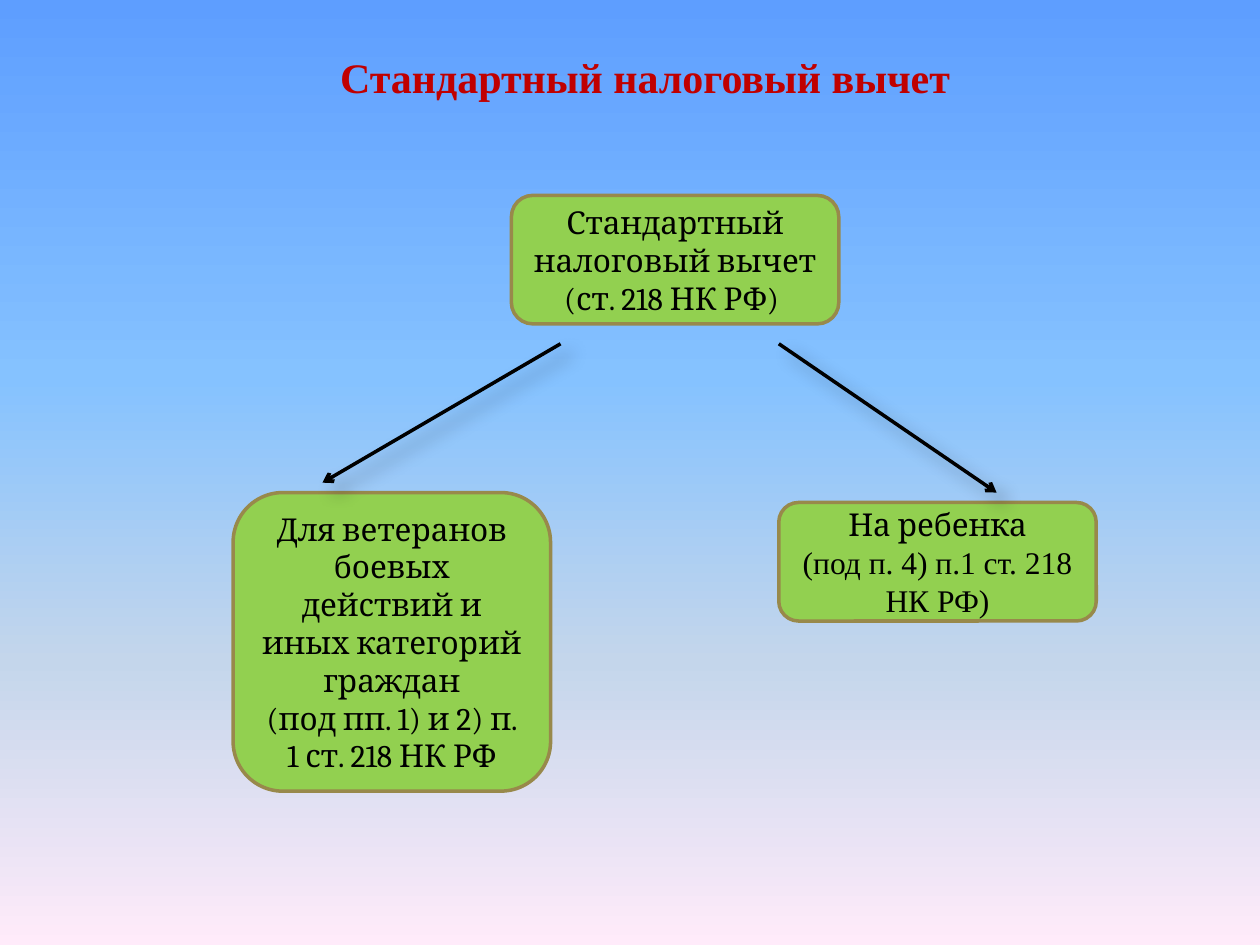
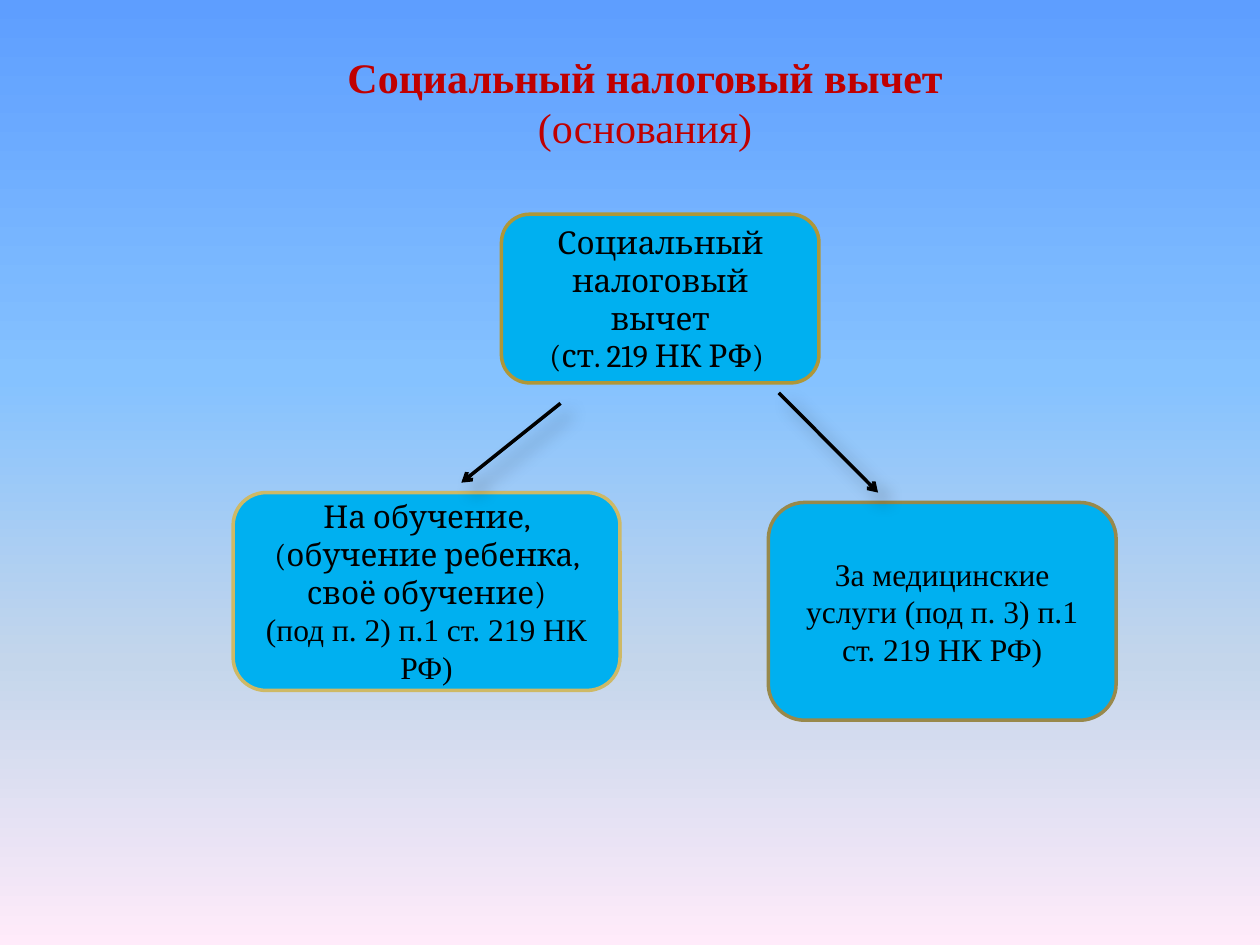
from pptx import Presentation
from pptx import util as u
from pptx.dml.color import RGBColor
from pptx.enum import shapes, text
from pptx.oxml import parse_xml
from pptx.oxml.ns import nsdecls, qn

BLACK = RGBColor(0x00, 0x00, 0x00)
TITLE_RED = RGBColor(0xC0, 0x00, 0x00)
GREEN = RGBColor(0x92, 0xD0, 0x50)
BLUE = RGBColor(0x00, 0xB0, 0xF0)
BROWN = RGBColor(0x98, 0x89, 0x4B)
OCHRE = RGBColor(0xAF, 0x97, 0x38)
SAND = RGBColor(0xCE, 0xB9, 0x66)
SKY_STOPS = [
    (0, RGBColor(0x5E, 0x9E, 0xFF)),
    (40, RGBColor(0x85, 0xC2, 0xFF)),
    (70, RGBColor(0xC4, 0xD6, 0xEB)),
    (100, RGBColor(0xFF, 0xEB, 0xFA)),
]
SERIF = "Times New Roman"
BOOK = "Cambria"
LEFT_COLUMN = 4.7
LEFT_TOP, RIGHT_TOP = 9.93, 10.13
LEFT_START, RIGHT_START = 11.3, 15.7
LEFT_TIP, RIGHT_TIP = 9.73, 9.93
BOX_WIDTH = 6.4


class DeductionDeck:
    def __init__(self):
        self.presentation = Presentation()
        self.presentation.slide_width = u.Cm(25.4)
        self.presentation.slide_height = u.Cm(19.05)
        self.slide = None

    def add_slide(self):
        self.slide = self.presentation.slides.add_slide(self.presentation.slide_layouts[6])
        stops = "".join(
            f'<a:gs pos="{position * 1000}"><a:srgbClr val="{color}"/></a:gs>'
            for position, color in SKY_STOPS
        )
        background = parse_xml(
            f'<p:bg {nsdecls("p", "a")}><p:bgPr><a:gradFill rotWithShape="1">'
            f'<a:gsLst>{stops}</a:gsLst><a:lin ang="5400000" scaled="0"/>'
            "</a:gradFill><a:effectLst/></p:bgPr></p:bg>"
        )
        self.slide.element.cSld.insert(0, background)

    def set_lines(self, frame, lines, size, color):
        frame.word_wrap = True
        for index, (words, font_name, bold) in enumerate(lines):
            paragraph = frame.paragraphs[0] if index == 0 else frame.add_paragraph()
            paragraph.text = words
            paragraph.alignment = text.PP_ALIGN.CENTER
            paragraph.font.name = font_name
            paragraph.font.size = u.Pt(size)
            paragraph.font.bold = bold
            paragraph.font.color.rgb = color

    def title(self, height, heading, subtitle=None):
        shape = self.slide.shapes.add_textbox(u.Cm(3.1), u.Cm(0.91), u.Cm(19.81), u.Cm(height))
        lines = [(heading, SERIF, True)]
        if subtitle:
            lines.append((subtitle, SERIF, False))
        self.set_lines(shape.text_frame, lines, 24, TITLE_RED)
        shape.text_frame.auto_size = text.MSO_AUTO_SIZE.SHAPE_TO_FIT_TEXT

    def box(self, left, top, width, height, fill, outline, *lines):
        shape = self.slide.shapes.add_shape(
            shapes.MSO_SHAPE.ROUNDED_RECTANGLE,
            u.Cm(left), u.Cm(top), u.Cm(width), u.Cm(height),
        )
        shape.shadow.inherit = False
        shape.fill.solid()
        shape.fill.fore_color.rgb = fill
        shape.line.color.rgb = outline
        shape.line.width = u.Pt(2)
        shape.text_frame.vertical_anchor = text.MSO_ANCHOR.MIDDLE
        self.set_lines(shape.text_frame, [(*line, False) for line in lines], 18, BLACK)

    def arrow(self, start_x, start_y, end_x, end_y):
        connector = self.slide.shapes.add_connector(
            shapes.MSO_CONNECTOR.STRAIGHT,
            u.Cm(start_x), u.Cm(start_y), u.Cm(end_x), u.Cm(end_y),
        )
        connector.line.color.rgb = BLACK
        connector.line.width = u.Pt(2)
        properties = connector.element.spPr
        properties.find(qn("a:ln")).append(
            parse_xml(f'<a:tailEnd {nsdecls("a")} type="arrow"/>')
        )
        properties.append(parse_xml(
            f'<a:effectLst {nsdecls("a")}><a:outerShdw blurRad="{u.Pt(10.2)}" '
            f'dist="{u.Pt(8)}" dir="2700000" algn="tl" rotWithShape="0">'
            f'<a:srgbClr val="{BLACK}"><a:alpha val="35000"/></a:srgbClr>'
            "</a:outerShdw></a:effectLst>"
        ))


def standard_deduction(deck):
    deck.add_slide()
    deck.box(10.31, 3.94, 6.6, 2.59, GREEN, BROWN,
             ("Стандартный налоговый вычет", BOOK),
             ("(ст. 218 НК РФ) ", BOOK))
    deck.box(LEFT_COLUMN, LEFT_TOP, BOX_WIDTH, 6.02, GREEN, BROWN,
             ("Для ветеранов боевых действий и иных категорий граждан", BOOK),
             ("(под пп. 1) и 2) п. 1 ст. 218 НК РФ", BOOK))
    deck.box(RIGHT_START, RIGHT_TOP, BOX_WIDTH, 2.39, GREEN, BROWN,
             ("На ребенка", BOOK),
             ("(под п. 4) п.1 ст. 218 НК РФ)", SERIF))
    deck.arrow(RIGHT_START, 6.93, 20.09, RIGHT_TIP)
    deck.arrow(LEFT_START, 6.93, 6.5, LEFT_TIP)
    deck.title(1.27, "Стандартный налоговый вычет")


def social_deduction(deck):
    deck.add_slide()
    deck.box(10.11, 4.32, BOX_WIDTH, 3.4, BLUE, OCHRE,
             ("Социальный налоговый вычет", BOOK),
             ("(ст. 219 НК РФ) ", BOOK))
    deck.box(LEFT_COLUMN, LEFT_TOP, 7.8, 3.99, BLUE, SAND,
             ("На обучение, (обучение ребенка, своё обучение)", BOOK),
             ("(под п. 2) п.1 ст. 219 НК РФ)", SERIF))
    deck.box(15.49, RIGHT_TOP, 7.01, 4.39, BLUE, BROWN,
             ("За медицинские услуги (под п. 3) п.1 ст. 219 НК РФ)", SERIF))
    deck.arrow(LEFT_START, 8.13, 9.3, LEFT_TIP)
    deck.arrow(RIGHT_START, 7.92, 17.7, RIGHT_TIP)
    deck.title(2.31, "Социальный налоговый вычет", "(основания)")


def main():
    deck = DeductionDeck()
    standard_deduction(deck)
    social_deduction(deck)
    deck.presentation.save("out.pptx")


if __name__ == "__main__":
    main()
